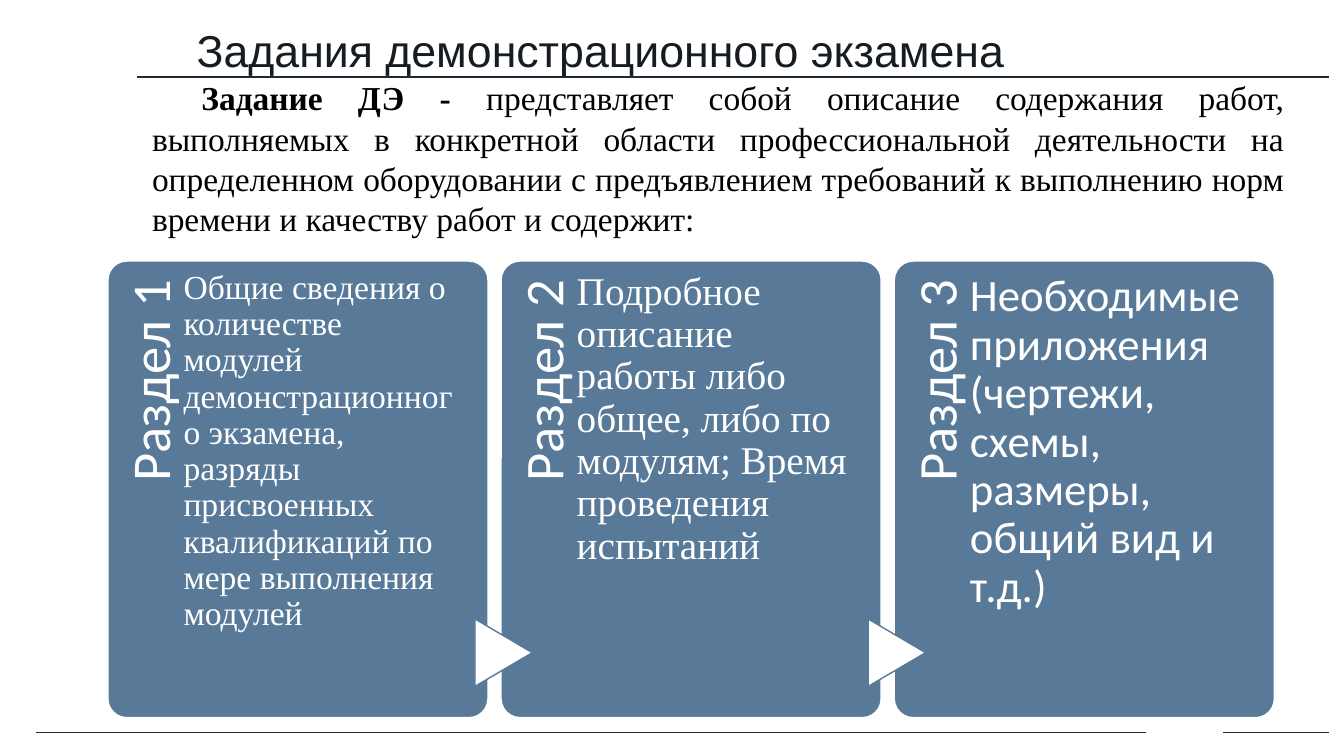
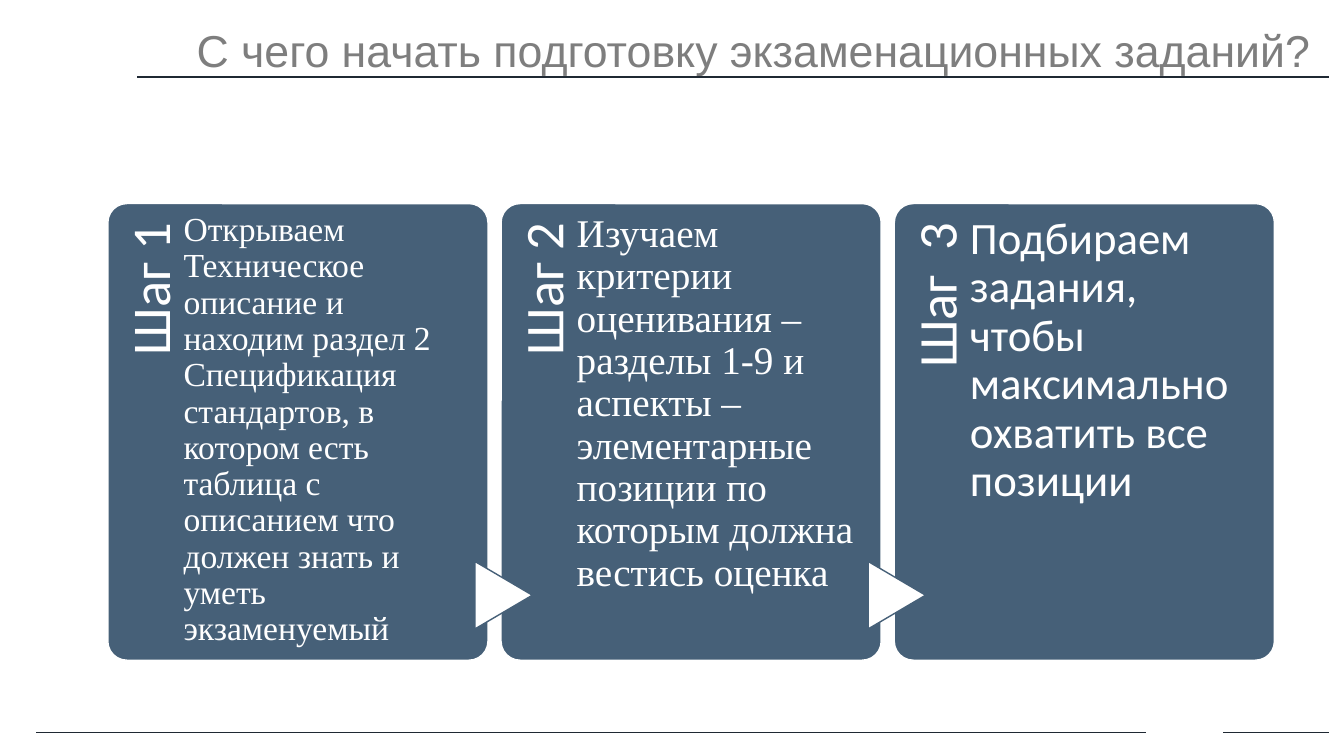
from lxml import etree
from pptx import Presentation
from pptx.dml.color import RGBColor
from pptx.enum.shapes import MSO_CONNECTOR, MSO_SHAPE
from pptx.enum.text import MSO_ANCHOR, MSO_AUTO_SIZE, PP_ALIGN
from pptx.oxml.ns import qn
from pptx.util import Inches, Pt

ROUNDED, EXTRACT = MSO_SHAPE.ROUNDED_RECTANGLE, MSO_SHAPE.FLOWCHART_EXTRACT
STRAIGHT = MSO_CONNECTOR.STRAIGHT
MIDDLE, TOP = MSO_ANCHOR.MIDDLE, MSO_ANCHOR.TOP
LEFT, RIGHT, JUSTIFY = PP_ALIGN.LEFT, PP_ALIGN.RIGHT, PP_ALIGN.JUSTIFY
NO_AUTOFIT = MSO_AUTO_SIZE.NONE

COLORS = {
    "rule": "1F2933",
    "title_dark": "151C22",
    "title_gray": "7E7E7E",
    "card_light": "587998",
    "card_dark": "466078",
    "white": "FFFFFF",
    "black": "000000",
}
SERIF, SANS, HEADING = "Times New Roman", "Calibri", "Arial"

SLIDES = [
    {
        "title": "Задания демонстрационного экзамена",
        "title_color": "title_dark",
        "intro": [
            ("Задание ДЭ - ", True),
            ("представляет собой описание содержания работ, выполняемых в "
             "конкретной области профессиональной деятельности на определенном "
             "оборудовании с предъявлением требований к выполнению норм времени "
             "и качеству работ и содержит:", False),
        ],
        "card_color": "card_light",
        "top": 2.59,
        "cards": [
            ("Раздел 1", "Общие сведения о количестве модулей демонстрационного "
             "экзамена, разряды присвоенных квалификаций по мере выполнения модулей"),
            ("Раздел 2", "Подробное описание работы либо общее, либо по модулям; "
             "Время проведения испытаний"),
            ("Раздел 3", "Необходимые приложения (чертежи, схемы, размеры, "
             "общий вид и т.д.)"),
        ],
    },
    {
        "title": "С чего начать подготовку экзаменационных заданий?",
        "title_color": "title_gray",
        "intro": [],
        "card_color": "card_dark",
        "top": 2.02,
        "cards": [
            ("Шаг 1", "Открываем Техническое описание и находим раздел 2 "
             "Спецификация стандартов, в котором есть таблица с описанием "
             "что должен знать и уметь экзаменуемый"),
            ("Шаг 2", "Изучаем критерии оценивания – разделы 1-9 и аспекты – "
             "элементарные позиции по которым должна вестись оценка"),
            ("Шаг  3", "Подбираем задания, чтобы максимально охватить все позиции"),
        ],
    },
]

RULES = [(1.36, 13.18, 0.76, 1.5), (0.36, 11.37, 7.27, 1), (12.13, 13.18, 7.27, 1)]
CARD_TEXT = [(24, SERIF, 0.09), (28, SERIF, 0.1), (32, SANS, 0.12)]
CARD_LEFT, CARD_PITCH, CARD_W, CARD_H = 1.07, 3.9, 3.77, 4.53
LABEL_W, LABEL_H = 3.71, 0.75
ARROW_W, ARROW_H = 0.67, 0.57


def rgb(name):
    return RGBColor.from_string(COLORS[name])


def add_run(p, text, size, font, color, bold=False):
    r = p.add_run()
    r.text = text
    r.font.size, r.font.name, r.font.bold = Pt(size), font, bold
    r.font.color.rgb = rgb(color)


def set_frame(shape, insets, align, spacing, anchor=TOP):
    tf = shape.text_frame
    tf.word_wrap, tf.auto_size, tf.vertical_anchor = True, NO_AUTOFIT, anchor
    tf.margin_left, tf.margin_top, tf.margin_right, tf.margin_bottom = map(Inches, insets)
    p = tf.paragraphs[0]
    p.alignment, p.line_spacing = align, spacing
    return p


def add_box(s, box, insets, align=LEFT, spacing=0.9):
    tb = s.shapes.add_textbox(*map(Inches, box))
    return tb, set_frame(tb, insets, align, spacing)


def add_filled(s, kind, box, fill, line):
    sp = s.shapes.add_shape(kind, *map(Inches, box))
    sp.shadow.inherit = False
    sp.fill.solid()
    sp.fill.fore_color.rgb = rgb(fill)
    sp.line.color.rgb = rgb(line)
    sp.line.width = Pt(1)
    return sp


def add_title(s, text, color):
    title = s.shapes.title
    title.left, title.top, title.width, title.height = map(Inches, (1.85, 0.31, 11.47, 0.44))
    p = set_frame(title, (0.1, 0.05, 0.1, 0.05), LEFT, 0.9, MIDDLE)
    add_run(p, text, 31.9, HEADING, color)


def add_rules(s):
    for x1, x2, y, width in RULES:
        rule = s.shapes.add_connector(STRAIGHT, *map(Inches, (x1, y, x2, y)))
        rule.line.color.rgb = rgb("rule")
        rule.line.width = Pt(width)
        etree.SubElement(rule._element.spPr, qn("a:effectLst"))


def add_intro(s, runs):
    p = add_box(s, (1.41, 0.72, 11.43, 1.71), (0.1, 0.05, 0.1, 0.05), JUSTIFY, 1.0)[1]
    p._p.get_or_add_pPr().set("indent", str(Inches(0.49)))
    for text, bold in runs:
        add_run(p, text, 23.9, SERIF, "black", bold)


def add_card(s, i, top, color, label, text):
    left = CARD_LEFT + i * CARD_PITCH
    card = add_filled(s, ROUNDED, (left, top, CARD_W, CARD_H), color, "white")
    card.adjustments[0] = 0.05

    center_x, center_y = left + LABEL_H / 2, top + LABEL_W / 2
    label_box = (center_x - LABEL_W / 2, center_y - LABEL_H / 2, LABEL_W, LABEL_H)
    tb, p = add_box(s, label_box, (0, 0.15, 0.19, 0), RIGHT)
    tb.rotation = 270
    add_run(p, label, 39, SANS, "white")

    if i:
        arrow_box = (left - 0.31, top + 3.6, ARROW_W, ARROW_H)
        add_filled(s, EXTRACT, arrow_box, "white", color).rotation = 90

    size, font, inset = CARD_TEXT[i]
    p = add_box(s, (left + LABEL_H, top, 2.81, CARD_H), (0, inset, 0, 0))[1]
    add_run(p, text, size, font, "white")


def main():
    prs = Presentation()
    prs.slide_width, prs.slide_height = Inches(13.33), Inches(7.5)
    for content in SLIDES:
        s = prs.slides.add_slide(prs.slide_layouts[5])
        add_title(s, content["title"], content["title_color"])
        add_rules(s)
        if content["intro"]:
            add_intro(s, content["intro"])
        for i, (label, text) in enumerate(content["cards"]):
            add_card(s, i, content["top"], content["card_color"], label, text)
    prs.save("out.pptx")


if __name__ == "__main__":
    main()
